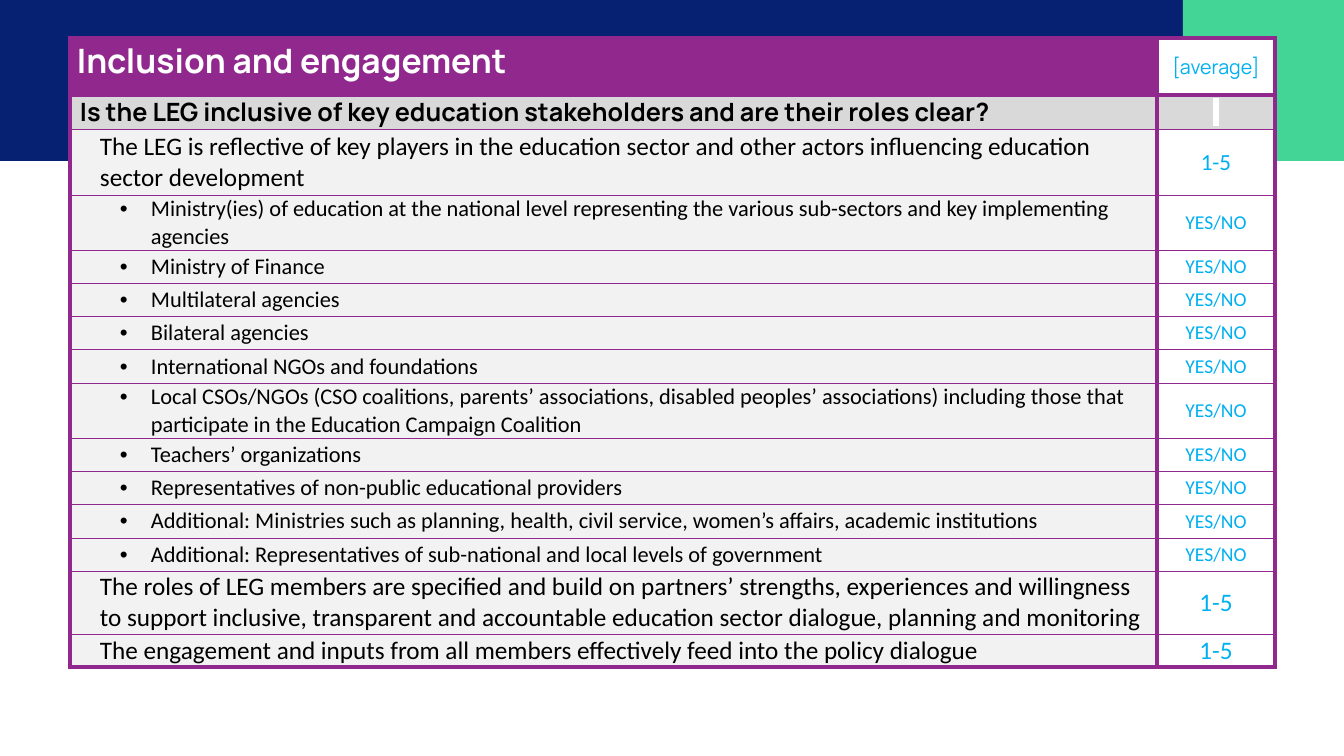
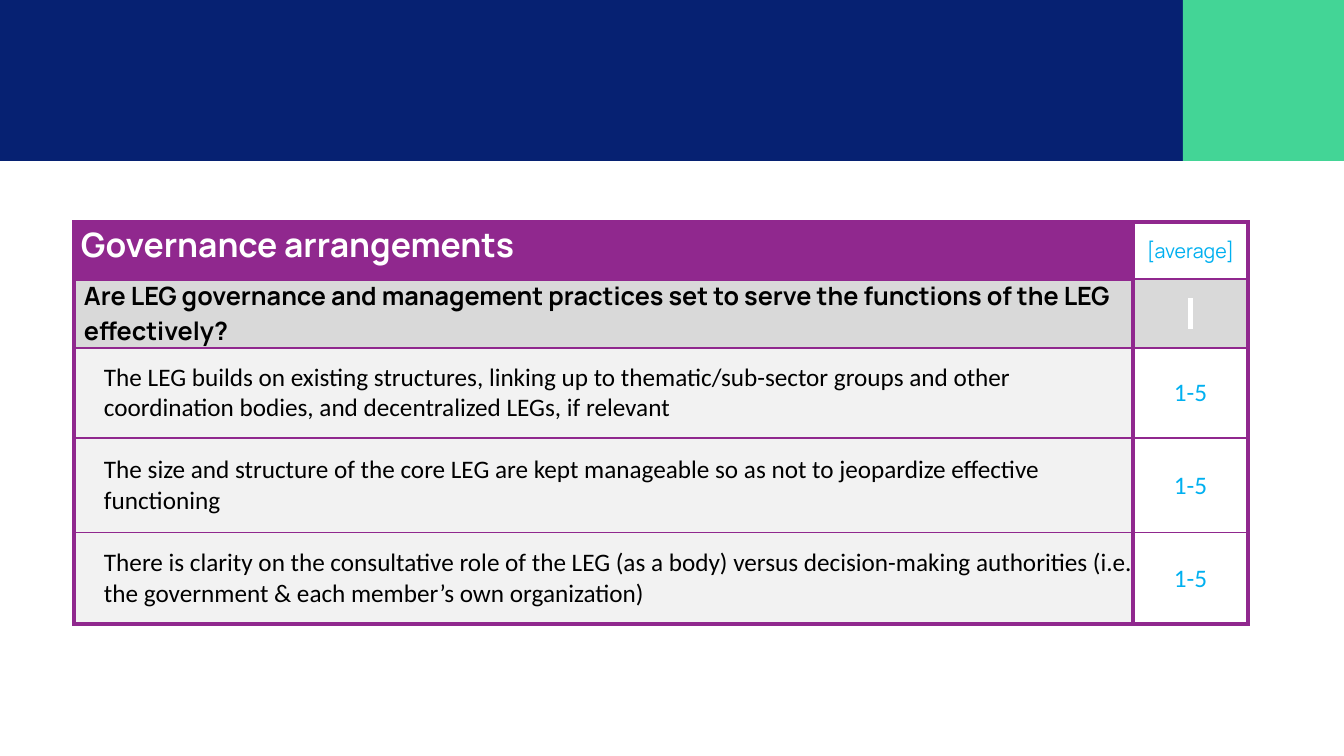
from dataclasses import dataclass

from lxml import etree
from pptx import Presentation
from pptx.dml.color import RGBColor
from pptx.enum.shapes import MSO_SHAPE
from pptx.enum.text import MSO_ANCHOR, PP_ALIGN
from pptx.oxml.ns import qn
from pptx.util import Emu, Pt

RECTANGLE = MSO_SHAPE.RECTANGLE
TOP, MIDDLE = MSO_ANCHOR.TOP, MSO_ANCHOR.MIDDLE
LEFT, CENTER = PP_ALIGN.LEFT, PP_ALIGN.CENTER
EMU_PER_PX = 914400 / 100.8
SLIDE_SIZE = (1344, 756)


@dataclass(frozen=True)
class Theme:
    navy: str = "062172"
    green: str = "43D596"
    purple: str = "90288E"
    score: str = "00B0F0"
    black: str = "000000"
    white: str = "FFFFFF"
    grey: str = "D9D9D9"
    pale: str = "F2F2F2"
    heading_font: str = "Manrope"
    body_font: str = "Calibri"
    title_size: float = 24
    text_size: float = 18
    item_size: float = 16
    compact_size: float = 16.5
    small_size: float = 14
    thick: float = 3
    thin: float = 1


THEME = Theme()


@dataclass(frozen=True)
class TextStyle:
    font: str
    size: float
    color: str
    fill: str
    inset: int = 0
    bold: bool = False
    align: int = LEFT
    anchor: int = MIDDLE
    bullet_indent: int = 0


ROW_STYLES = {
    "title": TextStyle(THEME.heading_font, THEME.title_size, THEME.white, THEME.purple,
                       inset=7, bold=True, anchor=TOP),
    "question": TextStyle(THEME.heading_font, THEME.text_size, THEME.black, THEME.grey,
                          inset=10, bold=True),
    "statement": TextStyle(THEME.body_font, THEME.text_size, THEME.black, THEME.pale, inset=30),
    "item": TextStyle(THEME.body_font, THEME.item_size, THEME.black, THEME.pale,
                      inset=50, bullet_indent=31),
}

BANDS = [
    ((0, 0, 1344, 161), THEME.navy),
    ((1200, 132, 144, 144), THEME.white),
    ((1183, 0, 161, 161), THEME.green),
]

AVERAGE, BLANK, RATING, YES_NO = "[average]", "\N{NO-BREAK SPACE}", "1-5", "YES/NO"

SCORECARDS = [
    {
        "position": (70, 38),
        "columns": (1087, 118),
        "average_rule": THEME.thick,
        "rows": [
            ("title", "Inclusion and engagement", 57, AVERAGE, THEME.small_size),
            ("question", "Is the LEG inclusive of key education stakeholders and are their roles "
             "clear?", 34, BLANK, THEME.compact_size),
            ("statement", "The LEG is reflective of key players in the education sector and other "
             "actors influencing education sector development", 66, RATING, THEME.compact_size),
            ("item", "Ministry(ies) of education at the national level representing the various "
             "sub-sectors and key implementing agencies", 55, YES_NO, THEME.small_size),
            ("item", "Ministry of Finance", 33, YES_NO, THEME.small_size),
            ("item", "Multilateral agencies", 33, YES_NO, THEME.small_size),
            ("item", "Bilateral agencies", 33, YES_NO, THEME.small_size),
            ("item", "International NGOs and foundations", 34, YES_NO, THEME.small_size),
            ("item", "Local CSOs/NGOs (CSO coalitions, parents’ associations, disabled peoples’ "
             "associations) including those that participate in the Education Campaign Coalition",
             55, YES_NO, THEME.small_size),
            ("item", "Teachers’ organizations", 33, YES_NO, THEME.small_size),
            ("item", "Representatives of non-public educational providers", 33, YES_NO,
             THEME.small_size),
            ("item", "Additional: Ministries such as planning, health, civil service, women’s "
             "affairs, academic institutions", 34, YES_NO, THEME.small_size),
            ("item", "Additional: Representatives of sub-national and local levels of government",
             33, YES_NO, THEME.small_size),
            ("statement", "The roles of LEG members are specified and build on partners’ "
             "strengths, experiences and willingness to support inclusive, transparent and "
             "accountable education sector dialogue, planning and monitoring", 63, RATING,
             THEME.text_size),
            ("statement", "The engagement and inputs from all members effectively feed into the "
             "policy dialogue", 33, RATING, THEME.text_size),
        ],
    },
    {
        "position": (74, 222),
        "columns": (1059, 115),
        "average_rule": THEME.thin,
        "rows": [
            ("title", "Governance arrangements", 57, AVERAGE, THEME.small_size),
            ("question", "Are LEG governance and management practices set to serve the functions "
             "of the LEG effectively?", 69, BLANK, THEME.text_size),
            ("statement", "The LEG builds on existing structures, linking up to "
             "thematic/sub-sector groups and other coordination bodies, and decentralized LEGs, "
             "if relevant", 90, RATING, THEME.text_size),
            ("statement", "The size and structure of the core LEG are kept manageable so as not "
             "to jeopardize effective functioning", 95, RATING, THEME.text_size),
            ("statement", "There is clarity on the consultative role of the LEG (as a body) "
             "versus decision-making authorities (i.e. the government & each member’s own "
             "organization)", 91, RATING, THEME.text_size),
        ],
    },
]


def px(length):
    return Emu(round(length * EMU_PER_PX))


def rgb(color):
    return RGBColor.from_string(color)


def add_color(parent, tag, color):
    holder = etree.SubElement(parent, qn(tag))
    etree.SubElement(holder, qn("a:srgbClr"), val=color)


def add_bands(slide, layout):
    for index, (box, color) in enumerate(BANDS):
        shape = slide.shapes.add_shape(RECTANGLE, *map(px, box))
        shape.shadow.inherit = False
        shape.fill.solid()
        shape.fill.fore_color.rgb = rgb(color)
        shape.line.fill.background()
        layout.shapes.element.insert(2 + index, shape.element)


def set_borders(cell, top, bottom):
    properties = cell._tc.get_or_add_tcPr()
    widths = {"a:lnL": THEME.thick, "a:lnR": THEME.thick, "a:lnT": top, "a:lnB": bottom}
    for tag, width in widths.items():
        line = etree.SubElement(properties, qn(tag), w=str(Pt(width)))
        add_color(line, "a:solidFill", THEME.purple)


def set_bullet(paragraph, indent):
    properties = paragraph._p.get_or_add_pPr()
    properties.set("marL", str(px(indent)))
    properties.set("indent", str(-px(indent)))
    etree.SubElement(properties, qn("a:buFont"), typeface="Arial")
    etree.SubElement(properties, qn("a:buChar"), char="•")


def fill_cell(cell, text, style):
    cell.fill.solid()
    cell.fill.fore_color.rgb = rgb(style.fill)
    cell.margin_left = px(style.inset)
    cell.margin_right = cell.margin_top = cell.margin_bottom = 0
    cell.vertical_anchor = style.anchor
    paragraph = cell.text_frame.paragraphs[0]
    run = paragraph.add_run()
    run.text = text
    paragraph.alignment = style.align
    if style.bullet_indent:
        set_bullet(paragraph, style.bullet_indent)
    font = paragraph.font
    font.name = style.font
    font.size = Pt(style.size)
    font.bold = style.bold
    font.color.rgb = rgb(style.color)
    if text == BLANK:
        add_color(run._r.get_or_add_rPr(), "a:highlight", THEME.white)


def score_style(kind, size):
    font = THEME.heading_font if kind == "title" else THEME.body_font
    fill = THEME.grey if kind == "question" else THEME.white
    return TextStyle(font, size, THEME.score, fill, align=CENTER)


def add_scorecard(slide, scorecard):
    rows, columns = scorecard["rows"], scorecard["columns"]
    height = sum(row[2] for row in rows)
    frame = slide.shapes.add_table(len(rows), len(columns), *map(px, scorecard["position"]),
                                   px(sum(columns)), px(height))
    table = frame.table
    table.first_row = table.horz_banding = False
    for column, width in zip(table.columns, columns):
        column.width = px(width)
    inner_rules = [THEME.thin] * (len(rows) - 2)
    title_rules = (THEME.thick, scorecard["average_rule"])
    for index, (kind, text, row_height, score, score_size) in enumerate(rows):
        table.rows[index].height = px(row_height)
        contents = [(text, ROW_STYLES[kind]), (score, score_style(kind, score_size))]
        for column, (content, style) in enumerate(contents):
            rules = [THEME.thick, title_rules[column], *inner_rules, THEME.thick]
            cell = table.cell(index, column)
            set_borders(cell, rules[index], rules[index + 1])
            fill_cell(cell, content, style)


def main():
    presentation = Presentation()
    presentation.slide_width, presentation.slide_height = map(px, SLIDE_SIZE)
    layout = presentation.slide_layouts[6]
    slides = [presentation.slides.add_slide(layout) for _ in SCORECARDS]
    add_bands(slides[0], layout)
    for slide, scorecard in zip(slides, SCORECARDS):
        add_scorecard(slide, scorecard)
    presentation.save("out.pptx")


if __name__ == "__main__":
    main()
